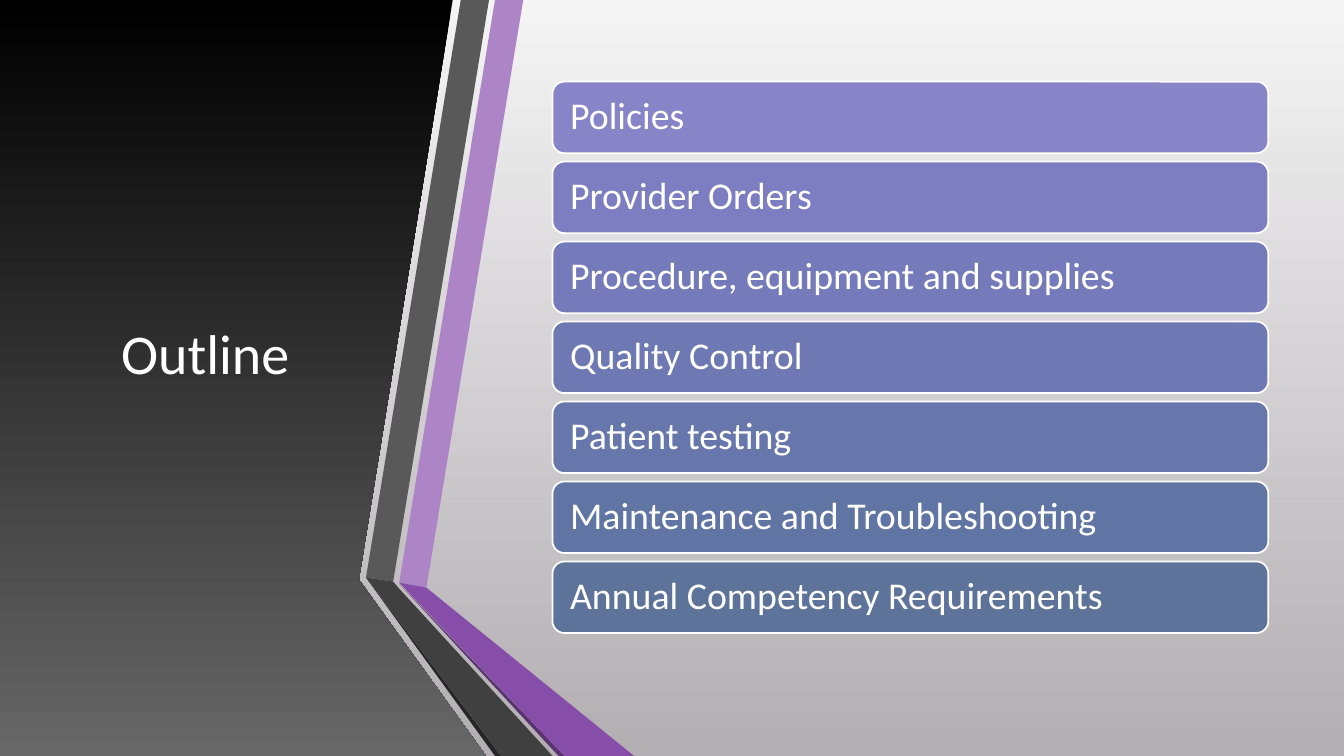
from pptx import Presentation
from pptx.dml.color import RGBColor
from pptx.enum.shapes import MSO_SHAPE
from pptx.enum.text import MSO_ANCHOR, PP_ALIGN
from pptx.util import Inches, Pt

ROUNDED = MSO_SHAPE.ROUNDED_RECTANGLE
MIDDLE = MSO_ANCHOR.MIDDLE
LEFT, CENTER = PP_ALIGN.LEFT, PP_ALIGN.CENTER
TITLE_ONLY = 5
WIDTH, HEIGHT = 13.33, 7.5

PANEL = [(0, 0), (4.49, 0), (3.56, 5.75), (4.82, 7.5), (0, 7.5)]
RIBBONS = [
    ("AD84C6", [(0.33, 5.78), (0.6, 5.83), (1.56, 0), (1.28, 0)]),
    ("595959", [(1.22, 0), (0.94, 0), (0, 5.73), (0.27, 5.77)]),
    ("262626", [(0, 5.73), (1.28, 7.5), (1.34, 7.5)]),
    ("5A3471", [(0.33, 5.79), (1.91, 7.5), (1.97, 7.5)]),
    ("874EA9", [(0.33, 5.78), (1.97, 7.5), (2.66, 7.5), (0.6, 5.83)]),
    ("404040", [(1.85, 7.5), (0.32, 5.83), (0.27, 5.77), (0, 5.73), (1.34, 7.5)]),
]
TOPICS = [
    ("Policies", "8784C7"),
    ("Provider Orders", "7C7EC1"),
    ("Procedure, equipment and supplies", "757BBA"),
    ("Quality Control", "6E79B3"),
    ("Patient testing", "6777AC"),
    ("Maintenance and Troubleshooting", "6175A4"),
    ("Annual Competency Requirements", "5D739A"),
]


def rgb(code):
    """Return the colour for a hex string."""
    return RGBColor.from_string(code)


def fill_solid(fill, code):
    """Fill with one colour."""
    fill.solid()
    fill.fore_color.rgb = rgb(code)


def fill_down(fill, top, bottom):
    """Fill with a gradient that runs from top to bottom."""
    fill.gradient()
    fill.gradient_angle = 270
    for stop, code in zip(fill.gradient_stops, (top, bottom)):
        stop.color.rgb = rgb(code)


def set_text(sp, text, size, align, margin, spacing):
    """Write one formatted paragraph into a shape."""
    tf = sp.text_frame
    tf.text = text
    p = tf.paragraphs[0]
    font = p.runs[0].font
    frame = {"word_wrap": True, "vertical_anchor": MIDDLE,
             "margin_left": Inches(margin), "margin_right": Inches(margin),
             "margin_top": 0, "margin_bottom": 0}
    formats = [(tf, frame),
               (p, {"alignment": align, "line_spacing": spacing}),
               (font, {"name": "Calibri", "size": Pt(size)}),
               (font.color, {"rgb": rgb("FFFFFF")})]
    for target, values in formats:
        for name, value in values.items():
            setattr(target, name, value)


def add_outline(s, left, top, points):
    """Add a closed outline without a line, offset by left and top."""
    pts = [(Inches(left + x), Inches(top + y)) for x, y in points]
    builder = s.shapes.build_freeform(*pts[0])
    builder.add_line_segments(pts[1:], close=True)
    sp = builder.convert_to_shape()
    sp.shadow.inherit = False
    sp.line.fill.background()
    return sp


def add_panel(s, left, top):
    """Add the dark panel on the left."""
    fill_down(add_outline(s, left, top, PANEL).fill, "000000", "676767")


def add_title(s, left, top, width, height):
    """Place the title in front of the panel."""
    sp = s.shapes.title
    s.shapes.element.append(sp.element)
    sp.left, sp.top, sp.width, sp.height = map(Inches, (left, top, width, height))
    set_text(sp, "Outline", 40, CENTER, 0.1, 0.9)


def add_ribbons(s, left, top):
    """Add the folded ribbons beside the panel."""
    for code, points in RIBBONS:
        fill_solid(add_outline(s, left, top, points).fill, code)


def add_topics(s, left, top, width, height, bar=0.71):
    """Spread the topic bars evenly over the box."""
    pitch = (height - bar) / (len(TOPICS) - 1)
    for i, (text, code) in enumerate(TOPICS):
        box = map(Inches, (left, top + i * pitch, width, bar))
        sp = s.shapes.add_shape(ROUNDED, *box)
        sp.shadow.inherit = False
        fill_solid(sp.fill, code)
        sp.line.color.rgb = rgb("FFFFFF")
        sp.line.width = Pt(1.25)
        set_text(sp, text, 27, LEFT, 0.14, 0.9)


def main():
    """Build the outline slide and save it."""
    prs = Presentation()
    prs.slide_width, prs.slide_height = Inches(WIDTH), Inches(HEIGHT)
    s = prs.slides.add_slide(prs.slide_layouts[TITLE_ONLY])
    fill_down(s.background.fill, "F5F4F5", "B2AEB2")
    add_panel(s, 0, 0)
    add_title(s, 0.59, 0.75, 2.89, 5.58)
    add_ribbons(s, 3.63, 0)
    add_topics(s, 5.48, 0.81, 7.1, 5.47)
    prs.save("out.pptx")


if __name__ == "__main__":
    main()
